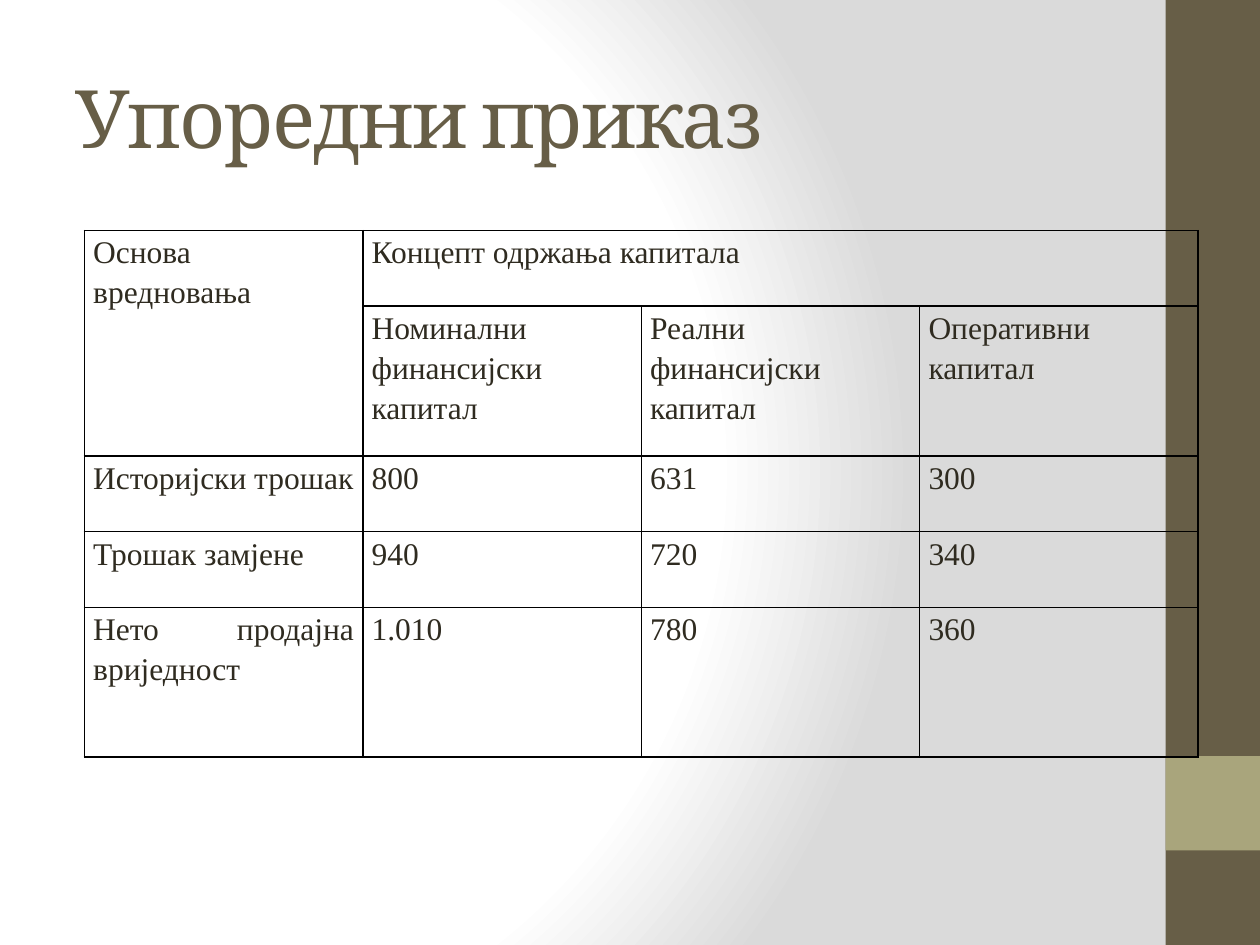
import dataclasses

import lxml.etree
import pptx
import pptx.dml.color
import pptx.enum.shapes
import pptx.enum.text
import pptx.oxml
import pptx.oxml.ns
import pptx.util
from pptx.util import Inches


@dataclasses.dataclass(frozen=True)
class Theme:
    brown: str = "675E47"
    olive: str = "A9A57C"
    ink: str = "2F2B20"
    border: str = "000000"
    light: str = "FFFFFF"
    shade: str = "DADADA"
    title_font: str = "Cambria"
    table_font: str = "Times New Roman"
    title_size: int = 46
    table_size: int = 18


theme = Theme()
namespaces = pptx.oxml.ns.nsdecls("a", "p")


def format_font(font, name, size, color):
    font.name = name
    font.size = pptx.util.Pt(size)
    font.bold = False
    font.color.rgb = pptx.dml.color.RGBColor.from_string(color)


def add_borders(cell):
    properties = cell._tc.get_or_add_tcPr()
    for position, side in enumerate(("lnL", "lnR", "lnT", "lnB")):
        properties.insert(position, pptx.oxml.parse_xml(
            f'<a:{side} {namespaces} w="12700"><a:solidFill>'
            f'<a:srgbClr val="{theme.border}"/></a:solidFill></a:{side}>'))


presentation = pptx.Presentation()
presentation.slide_width = Inches(10)
presentation.slide_height = Inches(7.5)
slide = presentation.slides.add_slide(presentation.slide_layouts[5])

stops = "".join(
    f'<a:gs pos="{position * 1000}"><a:srgbClr val="{color}"/></a:gs>'
    for position, color in ((0, theme.light), (75, theme.light), (100, theme.shade)))
slide._element.cSld.insert(0, pptx.oxml.parse_xml(
    f'<p:bg {namespaces}><p:bgPr><a:gradFill rotWithShape="1"><a:gsLst>{stops}</a:gsLst>'
    '<a:path path="circle"><a:fillToRect l="20000" t="50000" r="100000" b="50000"/></a:path>'
    '</a:gradFill><a:effectLst/></p:bgPr></p:bg>'))

for top, height, color in ((0, 7.5, theme.brown), (6, 0.75, theme.olive)):
    band = slide.shapes.add_shape(
        pptx.enum.shapes.MSO_SHAPE.RECTANGLE,
        Inches(9.25), Inches(top), Inches(0.75), Inches(height))
    band.shadow.inherit = False
    band.fill.solid()
    band.fill.fore_color.rgb = pptx.dml.color.RGBColor.from_string(color)
    band.line.fill.background()

title = slide.shapes.title
title.left, title.top = Inches(0.5), Inches(0.3)
title.width, title.height = Inches(8.33), Inches(1.25)
title.text_frame.text = "Упоредни приказ"
title.text_frame.auto_size = pptx.enum.text.MSO_AUTO_SIZE.NONE
title.text_frame.vertical_anchor = pptx.enum.text.MSO_ANCHOR.MIDDLE
title_paragraph = title.text_frame.paragraphs[0]
title_paragraph.alignment = pptx.enum.text.PP_ALIGN.LEFT
title_run = title_paragraph.runs[0]
format_font(title_run.font, theme.title_font, theme.title_size, theme.brown)
title_run._r.get_or_add_rPr().set("spc", "-100")

table_rows = [
    ["Основа вредновања", "Концепт одржања капитала", "", ""],
    ["", "Номинални финансијски капитал", "Реални финансијски капитал", "Оперативни капитал"],
    ["Историјски трошак", "800", "631", "300"],
    ["Трошак замјене", "940", "720", "340"],
    ["Нето продајна вриједност", "1.010", "780", "360"],
]
row_heights = [0.6, 1.19, 0.6, 0.6, 1.19]
table = slide.shapes.add_table(
    len(table_rows), 4, Inches(0.67), Inches(1.83),
    Inches(8.83), Inches(sum(row_heights))).table
table.first_row = False
table.horz_banding = False
for column in table.columns:
    column.width = Inches(2.21)

for row_index, (texts, height) in enumerate(zip(table_rows, row_heights)):
    table.rows[row_index].height = Inches(height)
    for column_index, text in enumerate(texts):
        cell = table.cell(row_index, column_index)
        cell.fill.background()
        add_borders(cell)
        cell.margin_left = cell.margin_right = Inches(0.07)
        cell.margin_top = cell.margin_bottom = Inches(0)
        cell.text_frame.text = text
        paragraph = cell.text_frame.paragraphs[0]
        paragraph.alignment = pptx.enum.text.PP_ALIGN.JUSTIFY
        paragraph.line_spacing = 1.15
        paragraph.space_after = pptx.util.Pt(6)
        for run in paragraph.runs:
            format_font(run.font, theme.table_font, theme.table_size, theme.ink)

table.cell(0, 0).merge(table.cell(1, 0))
table.cell(0, 1).merge(table.cell(0, 3))

presentation.save("out.pptx")
